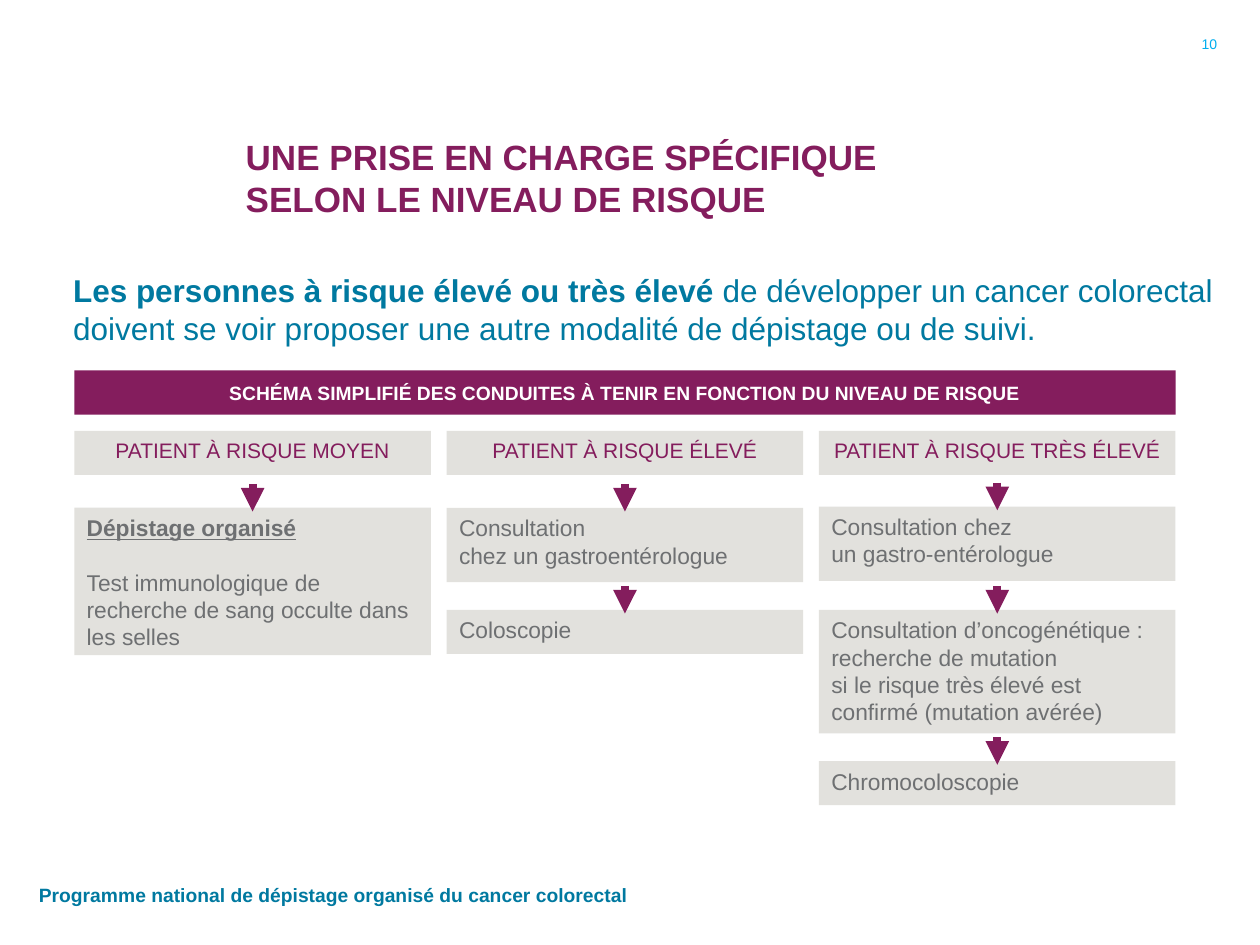
"""Build a slide on colorectal cancer screening by level of risk."""
from dataclasses import dataclass

from lxml import etree
from pptx import Presentation
from pptx.dml.color import RGBColor
from pptx.enum.shapes import MSO_CONNECTOR, MSO_SHAPE
from pptx.enum.text import MSO_ANCHOR, MSO_AUTO_SIZE, PP_ALIGN
from pptx.oxml.ns import qn
from pptx.util import Inches, Pt

LEFT, CENTER, RIGHT = PP_ALIGN.LEFT, PP_ALIGN.CENTER, PP_ALIGN.RIGHT
TOP, MIDDLE, BOTTOM = MSO_ANCHOR.TOP, MSO_ANCHOR.MIDDLE, MSO_ANCHOR.BOTTOM
NO_FIT = MSO_AUTO_SIZE.NONE
RECTANGLE = MSO_SHAPE.RECTANGLE
STRAIGHT = MSO_CONNECTOR.STRAIGHT


@dataclass(frozen=True)
class Theme:
    """Colours, type sizes and line width of the slide."""
    font: str = "Arial"
    plum: str = "841D5D"
    teal: str = "0079A0"
    cyan: str = "00AEEF"
    grey: str = "6E7072"
    panel: str = "E2E1DD"
    white: str = "FFFFFF"
    title_size: int = 20
    lead_size: int = 18
    step_size: int = 13
    heading_size: int = 12
    label_size: int = 11
    number_size: int = 8
    arrow_width: float = 4.5


class SlideBuilder:
    """Hold the theme and the current slide, and add its elements."""

    def __init__(self, slide, theme):
        """Keep the slide and the theme."""
        self.slide = slide
        self.theme = theme

    def set_text(self, shape, paragraphs, size, color, align=LEFT, anchor=TOP):
        """Fill a shape with paragraphs made of (text, format) spans."""
        frame = shape.text_frame
        settings = {"word_wrap": True, "auto_size": NO_FIT, "vertical_anchor": anchor}
        for name, value in settings.items():
            setattr(frame, name, value)
        for index, spans in enumerate(paragraphs):
            para = frame.add_paragraph() if index else frame.paragraphs[0]
            para.alignment = align
            for text, extra in spans:
                self.add_span(para, text, size, color, extra)
        return frame

    def add_span(self, para, text, size, color, extra):
        """Add one formatted span, with a line break at each newline."""
        for index, line in enumerate(text.split("\n")):
            if index:
                para.add_line_break()
            span = para.add_run()
            span.text = line
            values = {"name": self.theme.font, "size": Pt(size), "bold": False, **extra}
            for name, value in values.items():
                setattr(span.font, name, value)
            span.font.color.rgb = RGBColor.from_string(color)

    def title(self, place, text):
        """Move and format the title placeholder."""
        shape = self.slide.shapes.title
        for name, value in zip(("left", "top", "width", "height"), place):
            setattr(shape, name, Inches(value))
        self.set_text(shape, [[(text, {"bold": True})]], self.theme.title_size,
                      self.theme.plum, anchor=BOTTOM)

    def text(self, place, paragraphs, size, color, **layout):
        """Add a text box and return its text frame."""
        box = self.slide.shapes.add_textbox(*map(Inches, place))
        return self.set_text(box, paragraphs, size, color, **layout)

    def box(self, place, paragraphs, size, color, fill, **layout):
        """Add a filled rectangle with text and return its text frame."""
        box = self.slide.shapes.add_shape(RECTANGLE, *map(Inches, place))
        box.shadow.inherit = False
        box.fill.solid()
        box.fill.fore_color.rgb = RGBColor.from_string(fill)
        box.line.fill.background()
        return self.set_text(box, paragraphs, size, color, **layout)

    def arrow(self, x, start, end):
        """Add a vertical arrow pointing down."""
        arrow = self.slide.shapes.add_connector(
            STRAIGHT, Inches(x), Inches(start), Inches(x), Inches(end))
        arrow.line.width = Pt(self.theme.arrow_width)
        arrow.line.color.rgb = RGBColor.from_string(self.theme.plum)
        properties = arrow._element.spPr
        etree.SubElement(properties.find(qn("a:ln")), qn("a:tailEnd"), type="triangle")
        etree.SubElement(properties, qn("a:effectLst"))


def plain(*texts):
    """Return one unformatted paragraph for each text."""
    return [[(text, {})] for text in texts]


def main():
    """Build and save the deck."""
    deck = Presentation()
    deck.slide_width, deck.slide_height = Inches(10), Inches(7.5)
    theme = Theme()
    page = SlideBuilder(deck.slides.add_slide(deck.slide_layouts[5]), theme)
    bold = {"bold": True}

    page.title((1.85, 0.29, 7.6, 1.5),
               "UNE PRISE EN CHARGE SPÉCIFIQUE\nSELON LE NIVEAU DE RISQUE")
    lead = page.text((0.28, 2.1, 9.45, 0.75), [[
        ("Les personnes à risque élevé ou très élevé ", bold),
        ("de développer un cancer colorectal doivent se voir proposer "
         "une autre modalité de dépistage ou de suivi.", {}),
    ]], theme.lead_size, theme.teal)
    lead.margin_left = Inches(0.3)
    page.text((0.21, 6.9, 4.95, 0.4),
              [[("Programme national de dépistage organisé du cancer colorectal", bold)]],
              theme.label_size, theme.teal, anchor=MIDDLE)
    page.text((9.33, 0.21, 0.43, 0.28), plain("10"), theme.number_size, theme.cyan,
              align=RIGHT, anchor=MIDDLE)

    left, width, gap, row = 0.59, 2.83, 0.125, 0.35
    pitch = width + gap
    page.box((left, 2.94, 2 * pitch + width, row),
             [[("SCHÉMA SIMPLIFIÉ DES CONDUITES À TENIR EN FONCTION DU NIVEAU DE RISQUE",
                bold)]],
             theme.label_size, theme.white, theme.plum, align=CENTER, anchor=MIDDLE)

    screening = [[("Dépistage organisé", {"bold": True, "underline": True})],
                 *plain("Test immunologique de recherche de sang occulte dans les selles")]
    pathways = [
        ("PATIENT À RISQUE MOYEN", [(4.03, 1.17, screening)]),
        ("PATIENT À RISQUE ÉLEVÉ", [
            (4.03, 0.59, plain("Consultation", "chez un gastroentérologue")),
            (4.84, row, plain("Coloscopie")),
        ]),
        ("PATIENT À RISQUE TRÈS ÉLEVÉ", [
            (4.02, 0.59, plain("Consultation chez\nun gastro-entérologue")),
            (4.84, 0.98, plain("Consultation d’oncogénétique : recherche de mutation",
                               "si le risque très élevé est confirmé (mutation avérée)")),
            (6.04, row, plain("Chromocoloscopie")),
        ]),
    ]
    for column, (heading, steps) in enumerate(pathways):
        x = left + column * pitch
        page.box((x, 3.42, width, row), plain(heading), theme.heading_size,
                 theme.plum, theme.panel, align=CENTER)
        for top, height, paragraphs in steps:
            frame = page.box((x, top, width, height), paragraphs, theme.step_size,
                             theme.grey, theme.panel)
            if paragraphs is screening:
                frame.paragraphs[1].space_before = Pt(1.2 * theme.step_size)
            page.arrow(x + width / 2, top - 0.19, top + 0.03)

    deck.save("out.pptx")


if __name__ == "__main__":
    main()
